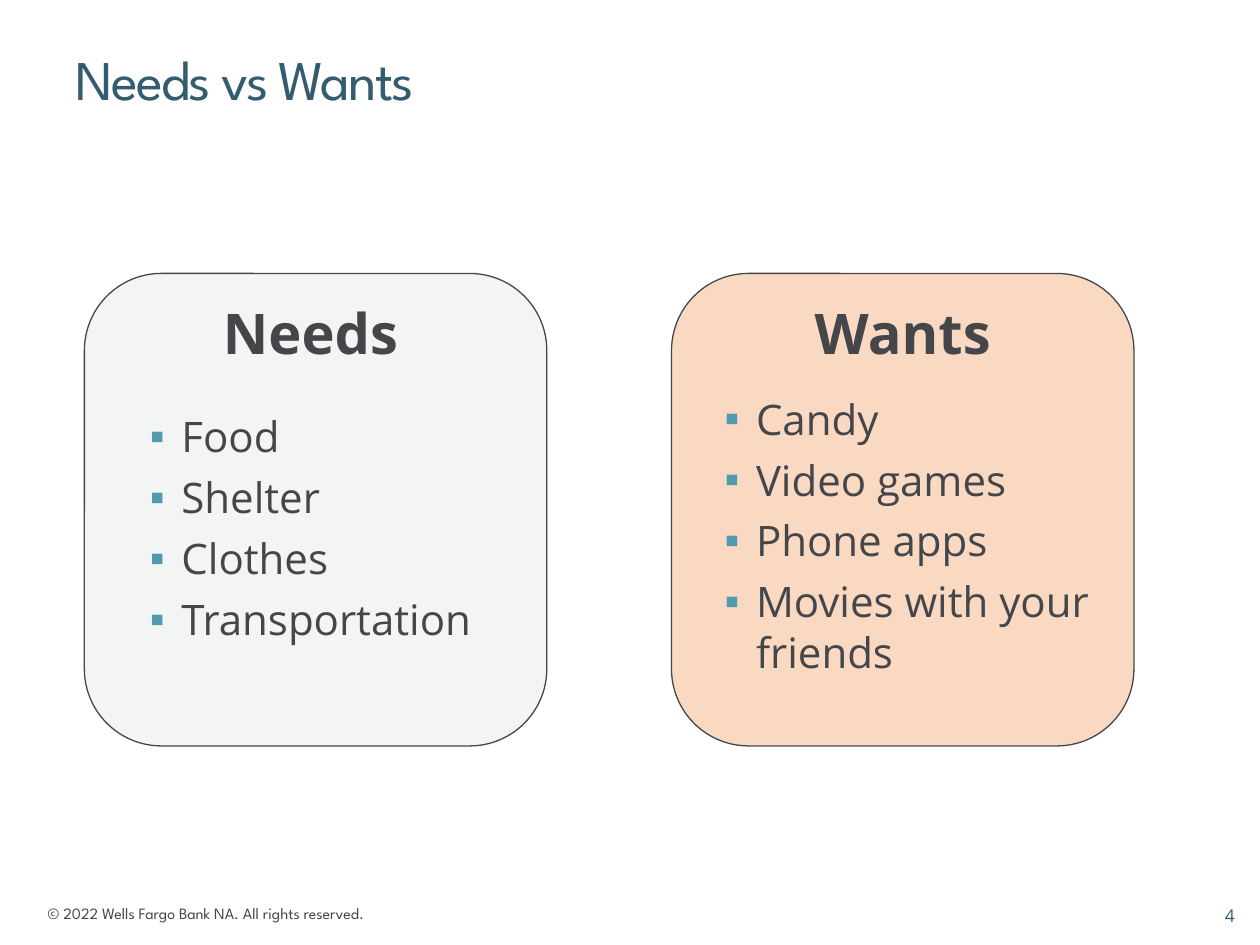
from dataclasses import dataclass

from lxml import etree
from pptx import Presentation
from pptx import util as u
from pptx.dml.color import RGBColor
from pptx.enum import shapes, text
from pptx.oxml.ns import qn


@dataclass(frozen=True)
class Theme:
    ink: str = "44464A"
    blue: str = "345C6F"
    teal: str = "5199AD"
    mist: str = "F2F5F3"
    peach: str = "F9D9C2"
    head: str = "League Spartan"
    body: str = "Open Sans"
    big: int = 32
    list: int = 24
    page: int = 10
    note: int = 9


T = Theme()
LEFT, CENTER, RIGHT = text.PP_ALIGN.LEFT, text.PP_ALIGN.CENTER, text.PP_ALIGN.RIGHT


def place(item, box):
    item.left, item.top, item.width, item.height = map(u.Inches, box)


def prep(frame, inset=0.0, wrap=True):
    frame.auto_size = text.MSO_AUTO_SIZE.NONE
    frame.word_wrap = wrap
    frame.vertical_anchor = text.MSO_ANCHOR.TOP
    frame.margin_left = frame.margin_right = u.Inches(inset)
    frame.margin_top = frame.margin_bottom = u.Inches(inset / 2)


def style(para, size, color, face, bold=False, align=LEFT):
    para.alignment = align
    for run in para.runs:
        font = run.font
        font.size, font.name, font.bold = u.Pt(size), face, bold
        font.color.rgb = RGBColor.from_string(color)


def label(group, box, words, *look, inset=0.0, wrap=True, **more):
    item = group.add_textbox(*map(u.Inches, box))
    prep(item.text_frame, inset, wrap)
    item.text_frame.text = words
    style(item.text_frame.paragraphs[0], *look, **more)


def bullet(para):
    props = para._p.get_or_add_pPr()
    props.set("marL", str(u.Inches(0.25)))
    props.set("indent", str(u.Inches(-0.25)))
    color = etree.SubElement(props, qn("a:buClr"))
    etree.SubElement(color, qn("a:srgbClr"), val=T.teal)
    etree.SubElement(props, qn("a:buFont"), typeface="Arial")
    etree.SubElement(props, qn("a:buChar"), char="▪")


def title(slide, box, words):
    item = slide.shapes.title
    place(item, box)
    prep(item.text_frame)
    item.text_frame.text = words
    para = item.text_frame.paragraphs[0]
    para.line_spacing = 1.05
    style(para, T.big, T.blue, T.head)
    para.runs[0]._r.get_or_add_rPr().set("spc", "-100")


def card(slide, box, fill, name, shift):
    """Rounded panel with its heading, kept behind the lists."""
    left, top, width, _ = box
    group = slide.shapes.add_group_shape()
    panel = group.shapes.add_shape(
        shapes.MSO_SHAPE.ROUNDED_RECTANGLE, *map(u.Inches, box))
    panel.shadow.inherit = False
    panel.fill.solid()
    panel.fill.fore_color.rgb = RGBColor.from_string(fill)
    panel.line.color.rgb = RGBColor.from_string(T.ink)
    panel.line.width = u.Pt(0.75)
    label(group.shapes, (left + shift, top + 0.15, width, 0.64), name,
          T.big, T.ink, T.body, inset=0.1, bold=True, align=CENTER)
    slide.shapes._spTree.insert(2, group._element)


def points(item, box, words):
    place(item, box)
    frame = item.text_frame
    prep(frame)
    frame.text = "\n".join(words)
    for para in frame.paragraphs:
        para.level = 1
        bullet(para)
        para.space_before, para.space_after = u.Pt(0), u.Pt(6)
        style(para, T.list, T.ink, T.body)


def footer(slide, box, words, page):
    left, top, width, height = box
    label(slide.shapes, (left, top, 3.05, 0.25), words,
          T.note, T.ink, T.head, inset=0.1, wrap=False)
    label(slide.shapes, (left + width - 0.4, top + 0.06, 0.4, height - 0.06), page,
          T.page, T.blue, T.body, align=RIGHT)


def main():
    deck = Presentation()
    deck.slide_width, deck.slide_height = u.Inches(10), u.Inches(7.5)
    slide = deck.slides.add_slide(deck.slide_layouts[3])
    for item in list(slide.placeholders):
        if item.placeholder_format.idx > 2:
            item._element.getparent().remove(item._element)

    title(slide, (0.6, 0.33, 5.15, 0.5), "Needs vs Wants")

    # Two cards, each with its list
    card(slide, (0.67, 2.17, 3.67, 3.75), T.mist, "Needs", -0.04)
    card(slide, (5.33, 2.17, 3.67, 3.75), T.peach, "Wants", 0)
    points(slide.placeholders[1], (1.19, 3.26, 2.98, 2),
           ("Food", "Shelter", "Clothes", "Transportation"))
    points(slide.placeholders[2], (5.75, 3.12, 3.08, 2.38),
           ("Candy", "Video games", "Phone apps", "Movies with your friends"))

    footer(slide, (0.28, 7.12, 9.52, 0.38),
           "© 2022 Wells Fargo Bank NA. All rights reserved.", "4")
    deck.save("out.pptx")


if __name__ == "__main__":
    main()
